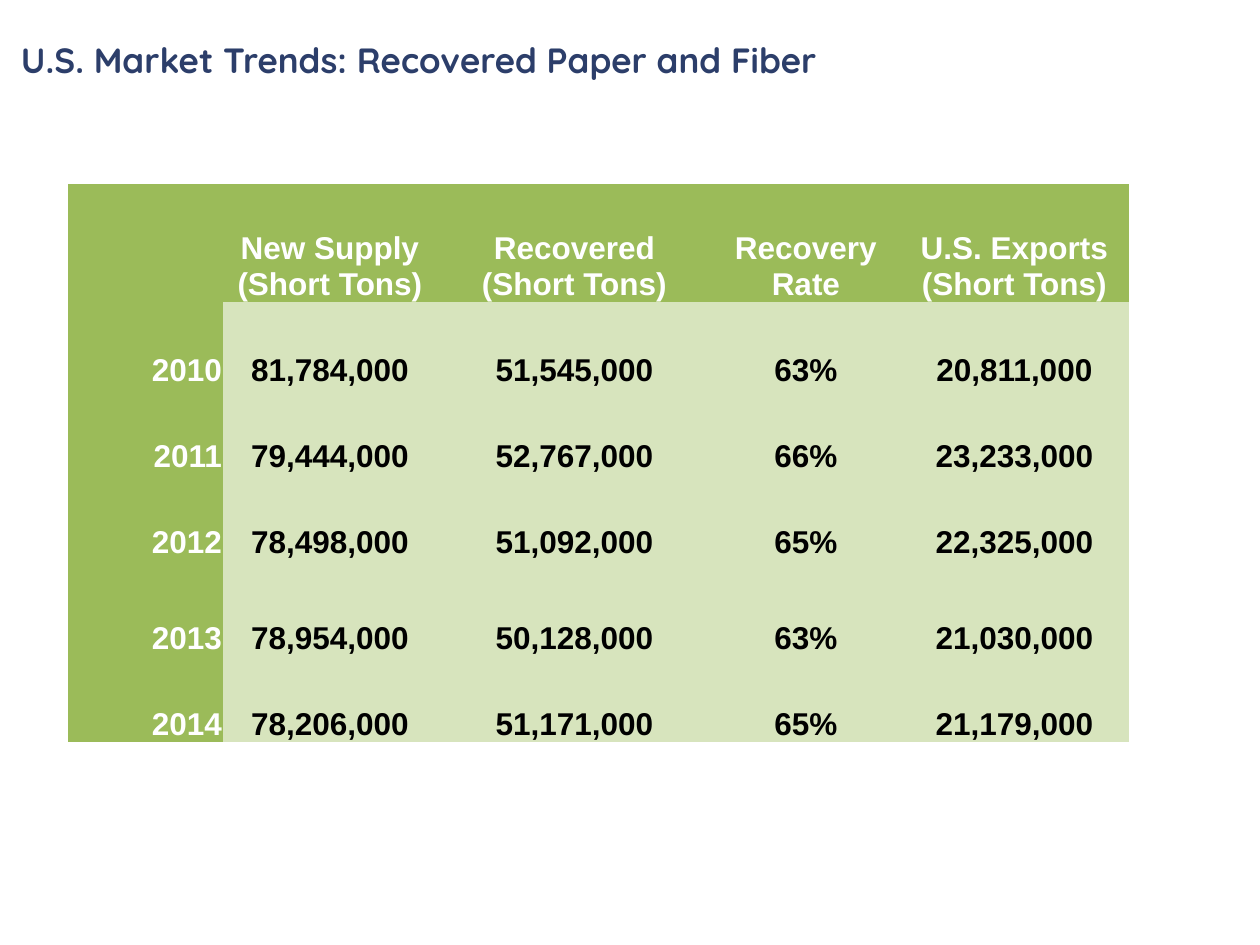
from pptx import Presentation
from pptx.dml.color import RGBColor
from pptx.enum.text import MSO_ANCHOR, PP_ALIGN
from pptx.oxml.ns import qn
from pptx.util import Emu, Pt

LEFT, CENTER, RIGHT = PP_ALIGN.LEFT, PP_ALIGN.CENTER, PP_ALIGN.RIGHT
MIDDLE, BOTTOM = MSO_ANCHOR.MIDDLE, MSO_ANCHOR.BOTTOM
EMU_PER_PX = 914400 // 126
NO_GRID_STYLE = "{2D5ABB26-0587-4C30-8999-92F81FD0307C}"
COLORS = {"title": "2C3E6A", "header": "9BBB59", "body": "D7E4BD",
          "white": "FFFFFF", "black": "000000"}

HEADINGS = ["", "New Supply\n(Short Tons)", "Recovered\n(Short Tons)",
            "Recovery\nRate", "U.S. Exports\n(Short Tons)"]
YEARS = [
    ["2010", "81,784,000", "51,545,000", "63%", "20,811,000"],
    ["2011", "79,444,000", "52,767,000", "66%", "23,233,000"],
    ["2012", "78,498,000", "51,092,000", "65%", "22,325,000"],
    ["2013", "78,954,000", "50,128,000", "63%", "21,030,000"],
    ["2014", "78,206,000", "51,171,000", "65%", "21,179,000"],
]
COLUMN_WIDTHS = [155, 214, 275, 188, 229]
ROW_HEIGHTS = [118, 86, 86, 86, 96, 86]


def px(length):
    return Emu(length * EMU_PER_PX)


def color(name):
    return RGBColor.from_string(COLORS[name])


def write(frame, text, *, font="Arial", size=18, ink="black", align=LEFT):
    for index, line in enumerate(text.split("\n")):
        paragraph = frame.add_paragraph() if index else frame.paragraphs[0]
        paragraph.text = line
        paragraph.alignment = align
        paragraph.font.name = font
        paragraph.font.size = Pt(size)
        paragraph.font.bold = True
        paragraph.font.color.rgb = color(ink)


class MarketSlide:
    """Holds the current slide and draws its title and table in one style."""

    def __init__(self, deck):
        self.slide = deck.slides.add_slide(deck.slide_layouts[6])

    def title(self, text, left, top, width, height):
        heading = self.slide.shapes.add_textbox(
            px(left), px(top), px(width), px(height)).text_frame
        heading.word_wrap = True
        heading.vertical_anchor = MIDDLE
        heading.margin_left = px(21)
        write(heading, text, font="Quicksand", size=20, ink="title")

    def table(self, rows, left, top, widths, heights):
        frame = self.slide.shapes.add_table(
            len(rows), len(widths), px(left), px(top),
            px(sum(widths)), px(sum(heights)))
        frame._element.find(".//" + qn("a:tableStyleId")).text = NO_GRID_STYLE
        table = frame.table
        for column, width in zip(table.columns, widths):
            column.width = px(width)
        for row, height in zip(table.rows, heights):
            row.height = px(height)
        for r, values in enumerate(rows):
            for c, value in enumerate(values):
                self.cell(table.cell(r, c), value, is_header=r == 0 or c == 0,
                          align=CENTER if c else RIGHT)

    def cell(self, cell, value, is_header, align):
        cell.fill.solid()
        cell.fill.fore_color.rgb = color("header" if is_header else "body")
        cell.vertical_anchor = BOTTOM
        cell.margin_left = cell.margin_right = cell.margin_top = px(1)
        cell.margin_bottom = 0
        write(cell.text_frame, value, ink="white" if is_header else "black",
              align=align)


def main():
    deck = Presentation()
    deck.slide_width, deck.slide_height = px(1260), px(945)
    market = MarketSlide(deck)
    market.title("U.S. Market Trends: Recovered Paper and Fiber", 0, 0, 945, 118)
    market.table([HEADINGS, *YEARS], 68, 184, COLUMN_WIDTHS, ROW_HEIGHTS)
    deck.save("out.pptx")


if __name__ == "__main__":
    main()
